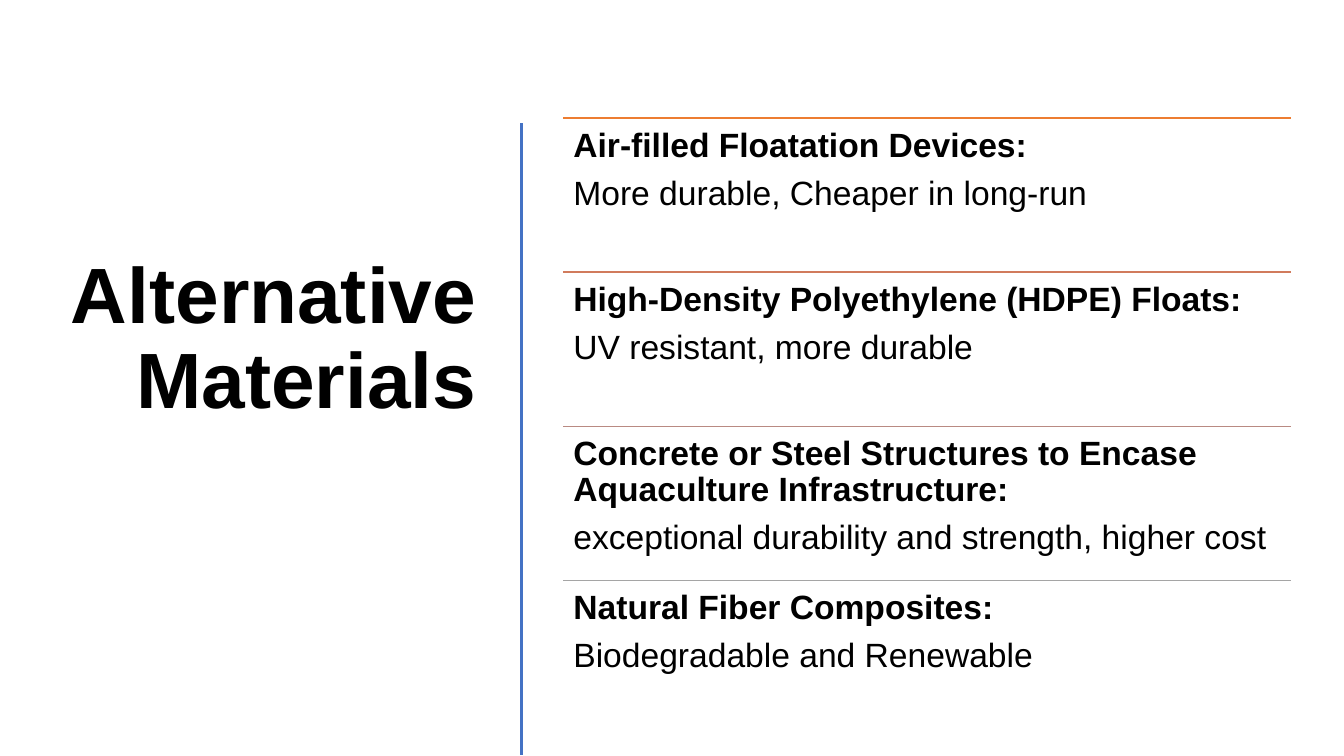
from lxml import etree
from pptx import Presentation
from pptx.dml.color import RGBColor
from pptx.enum.shapes import MSO_CONNECTOR
from pptx.enum.text import MSO_ANCHOR, MSO_AUTO_SIZE, PP_ALIGN
from pptx.oxml.ns import qn
from pptx.util import Pt

STRAIGHT = MSO_CONNECTOR.STRAIGHT
TOP, MIDDLE = MSO_ANCHOR.TOP, MSO_ANCHOR.MIDDLE
LEFT, RIGHT = PP_ALIGN.LEFT, PP_ALIGN.RIGHT
NO_AUTOFIT = MSO_AUTO_SIZE.NONE
TITLE_ONLY_LAYOUT = 5

LIST_LEFT, LIST_TOP = 402.5, 84.25
LIST_WIDTH, ROW_HEIGHT = 520, 110.16
MATERIALS = [
    ("ED7D31", "Air-filled Floatation Devices:", "More durable, Cheaper in long-run"),
    ("D17B5C", "High-Density Polyethylene (HDPE) Floats:", "UV resistant, more durable"),
    ("B98A82", "Concrete or Steel Structures to Encase Aquaculture Infrastructure:",
     "exceptional durability and strength, higher cost"),
    ("A5A5A5", "Natural Fiber Composites:", "Biodegradable and Renewable"),
]


def color(hex_string):
    return RGBColor.from_string(hex_string)


class SlideBuilder:
    font_name = "Arial"
    text_color = "000000"
    line_spacing = 0.9

    def __init__(self, slide):
        self.slide = slide

    def format_paragraph(self, paragraph, size, bold, alignment=LEFT, space_after=0):
        paragraph.alignment = alignment
        paragraph.line_spacing = self.line_spacing
        paragraph.space_before = Pt(0)
        paragraph.space_after = Pt(space_after)
        for run in paragraph.runs:
            run.font.name = self.font_name
            run.font.size = Pt(size)
            run.font.bold = bold
            run.font.color.rgb = color(self.text_color)

    def format_frame(self, text_frame, anchor, margins):
        """Set the frame up; margins are left, top, right, bottom."""
        text_frame.word_wrap = True
        text_frame.auto_size = NO_AUTOFIT
        text_frame.vertical_anchor = anchor
        (text_frame.margin_left, text_frame.margin_top,
         text_frame.margin_right, text_frame.margin_bottom) = map(Pt, margins)

    def title(self, text, left, top, width, height):
        shape = self.slide.shapes.title
        shape.left, shape.top = Pt(left), Pt(top)
        shape.width, shape.height = Pt(width), Pt(height)
        shape.text_frame.text = text
        # The deep bottom margin lifts the title above the middle.
        self.format_frame(shape.text_frame, MIDDLE, (7.2, 3.6, 7.2, 125))
        self.format_paragraph(shape.text_frame.paragraphs[0], 56, True, RIGHT)

    def line(self, start_x, start_y, end_x, end_y, line_color, width):
        connector = self.slide.shapes.add_connector(
            STRAIGHT, Pt(start_x), Pt(start_y), Pt(end_x), Pt(end_y))
        connector.line.color.rgb = color(line_color)
        connector.line.width = Pt(width)
        etree.SubElement(connector._element.spPr, qn("a:effectLst"))

    def material(self, heading, detail, left, top, width, height):
        shape = self.slide.shapes.add_textbox(Pt(left), Pt(top), Pt(width), Pt(height))
        text_frame = shape.text_frame
        text_frame.text = f"{heading}\n{detail}"
        self.format_frame(text_frame, TOP, (7.2, 7.2, 7.2, 7.2))
        for paragraph, bold in zip(text_frame.paragraphs, (True, False)):
            self.format_paragraph(paragraph, 24, bold, space_after=8.5)


def main():
    presentation = Presentation()
    presentation.slide_width, presentation.slide_height = Pt(960), Pt(540)
    layout = presentation.slide_layouts[TITLE_ONLY_LAYOUT]
    builder = SlideBuilder(presentation.slides.add_slide(layout))

    builder.title("Alternative Materials", 37.5, 84.25, 310, 440)
    builder.line(372.25, 88, 372.25, 539.5, "4472C4", 2)
    for row, (line_color, heading, detail) in enumerate(MATERIALS):
        top = LIST_TOP + row * ROW_HEIGHT
        builder.line(LIST_LEFT, top, LIST_LEFT + LIST_WIDTH, top, line_color, 1)
        builder.material(heading, detail, LIST_LEFT, top, LIST_WIDTH, ROW_HEIGHT)

    presentation.save("out.pptx")


if __name__ == "__main__":
    main()
